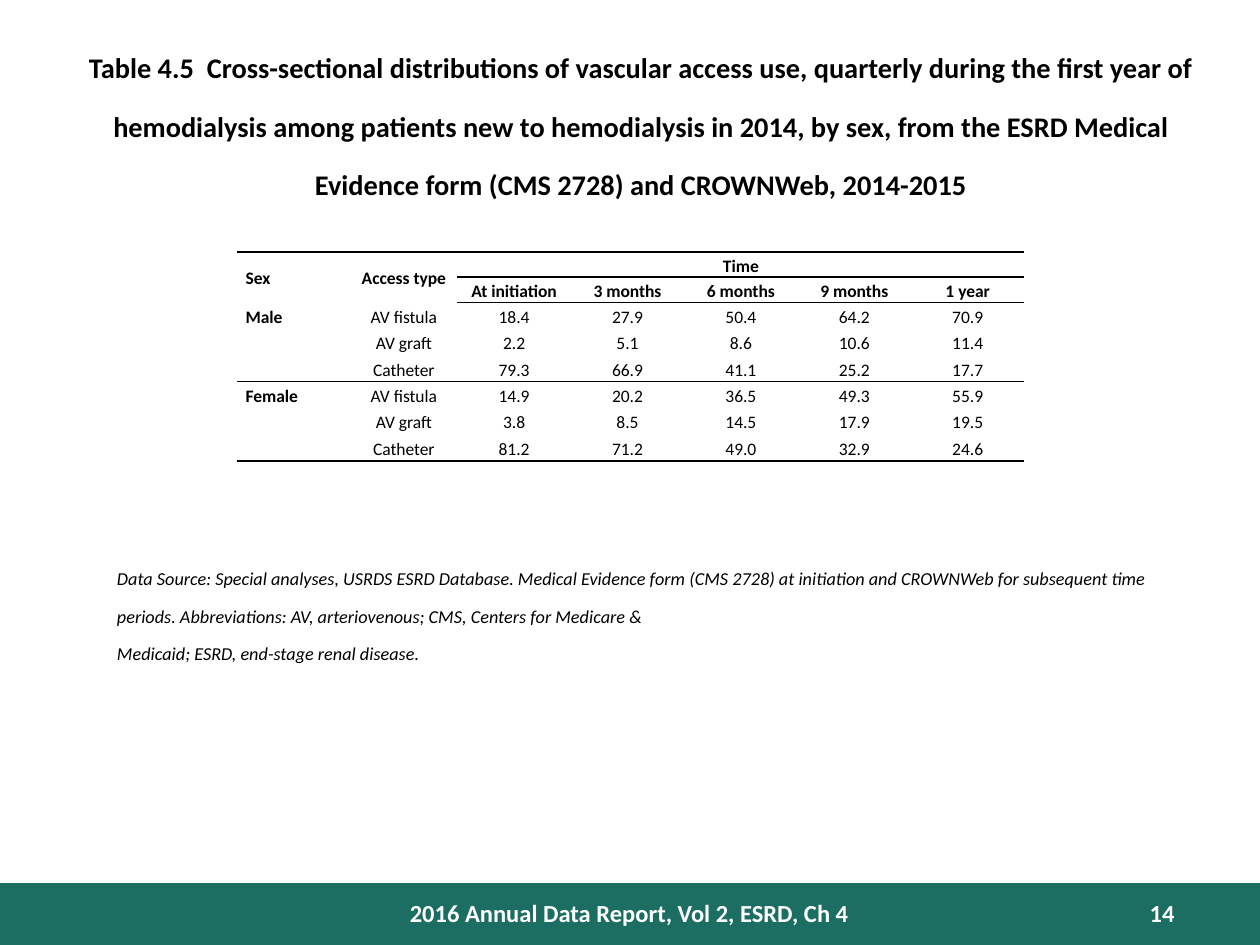
from lxml.etree import SubElement
from pptx import Presentation
from pptx.dml.color import RGBColor
from pptx.enum.shapes import MSO_SHAPE
from pptx.enum.text import MSO_ANCHOR, PP_ALIGN
from pptx.oxml.ns import qn
from pptx.util import Inches, Pt

GREEN = RGBColor(0x1C, 0x6E, 0x62)
WHITE = RGBColor(0xFF, 0xFF, 0xFF)
BLACK = RGBColor(0x00, 0x00, 0x00)
PLAIN_STYLE = "{2D5ABB26-0587-4C30-8999-92F81FD0307C}"  # no style, no grid


def write(paragraph, text, alignment, color, raised=False, **font_format):
    paragraph.alignment = alignment
    run = paragraph.add_run()
    run.text = text
    run.font.name = "Calibri"
    run.font.color.rgb = color
    for name, value in font_format.items():
        setattr(run.font, name, value)
    if raised:
        run.font._element.set("baseline", "30000")


def add_border(cell, side):
    line = SubElement(cell._tc.get_or_add_tcPr(), qn(f"a:{side}"), w=str(Pt(1)))
    fill = SubElement(line, qn("a:solidFill"))
    SubElement(fill, qn("a:srgbClr"), val=str(BLACK))


presentation = Presentation()
presentation.slide_width = Inches(10)
presentation.slide_height = Inches(7.5)
slide = presentation.slides.add_slide(presentation.slide_layouts[6])

# Footer band
band = slide.shapes.add_shape(
    MSO_SHAPE.RECTANGLE, Inches(0), Inches(7.01), Inches(10), Inches(0.5))
band.shadow.inherit = False
band.fill.solid()
band.fill.fore_color.rgb = GREEN
band.line.fill.background()

# Title, source note, footer and page number
title_format = dict(size=Pt(28), bold=True, raised=True)
note_format = dict(size=Pt(18), italic=True, raised=True)
footer_format = dict(size=Pt(14), bold=True)
text_boxes = [
    ((0.5, 0.3, 9.17, 1.25), PP_ALIGN.CENTER, BLACK, title_format, [
        "Table 4.5  Cross-sectional distributions of vascular access use, "
        "quarterly during the first year of hemodialysis among patients new to "
        "hemodialysis in 2014, by sex, from the ESRD Medical Evidence form "
        "(CMS 2728) and CROWNWeb, 2014-2015"]),
    ((0.83, 4.42, 8.42, 0.71), PP_ALIGN.LEFT, BLACK, note_format, [
        "Data Source: Special analyses, USRDS ESRD Database. Medical Evidence "
        "form (CMS 2728) at initiation and CROWNWeb for subsequent time periods. "
        "Abbreviations: AV, arteriovenous; CMS, Centers for Medicare &",
        "Medicaid; ESRD, end-stage renal disease."]),
    ((3.08, 7.08, 3.83, 0.33), PP_ALIGN.CENTER, WHITE, footer_format,
     ["2016 Annual Data Report, Vol 2, ESRD, Ch 4"]),
    ((8.42, 7.08, 1, 0.3), PP_ALIGN.RIGHT, WHITE, footer_format, ["14"]),
]
for position, alignment, color, font_format, lines in text_boxes:
    frame = slide.shapes.add_textbox(*map(Inches, position)).text_frame
    frame.word_wrap = True
    for index, line in enumerate(lines):
        paragraph = frame.add_paragraph() if index else frame.paragraphs[0]
        write(paragraph, line, alignment, color, **font_format)

# Vascular access table
rows = [
    ["Sex", "Access type", "Time", "", "", "", ""],
    ["", "", "At initiation", "3 months", "6 months", "9 months", "1 year"],
    ["Male", "AV fistula", "18.4", "27.9", "50.4", "64.2", "70.9"],
    ["", "AV graft", "2.2", "5.1", "8.6", "10.6", "11.4"],
    ["", "Catheter", "79.3", "66.9", "41.1", "25.2", "17.7"],
    ["Female", "AV fistula", "14.9", "20.2", "36.5", "49.3", "55.9"],
    ["", "AV graft", "3.8", "8.5", "14.5", "17.9", "19.5"],
    ["", "Catheter", "81.2", "71.2", "49.0", "32.9", "24.6"],
]
HEADER_ROWS = 2
RULED_ROWS = (1, 4, 7)  # rows with a line below
table = slide.shapes.add_table(
    len(rows), len(rows[0]), Inches(1.88), Inches(2), Inches(6.24), Inches(1.64)).table
table.first_row = False
table.horz_banding = False
table._tbl.tblPr.find(qn("a:tableStyleId")).text = PLAIN_STYLE
for index, column in enumerate(table.columns):
    column.width = Inches(0.85 if index == 1 else 0.9)
for index, row in enumerate(table.rows):
    row.height = Inches(0.2 if index < HEADER_ROWS else 0.21)

cell_format = dict(
    vertical_anchor=MSO_ANCHOR.MIDDLE, margin_left=Inches(0.07),
    margin_right=Inches(0.07), margin_top=Inches(0), margin_bottom=Inches(0))
for row_index, values in enumerate(rows):
    for column_index, value in enumerate(values):
        cell = table.cell(row_index, column_index)
        for name, setting in cell_format.items():
            setattr(cell, name, setting)
        if row_index == 0:
            add_border(cell, "lnT")
        if row_index in RULED_ROWS or (row_index == 0 and column_index > 1):
            add_border(cell, "lnB")
        if row_index >= HEADER_ROWS and column_index < 2:
            cell.fill.solid()
            cell.fill.fore_color.rgb = WHITE
        else:
            cell.fill.background()
        paragraph = cell.text_frame.paragraphs[0]
        paragraph.line_spacing = 1.15
        if value:
            write(paragraph, value,
                  PP_ALIGN.CENTER if column_index else PP_ALIGN.LEFT, BLACK,
                  size=Pt(10), bold=row_index < HEADER_ROWS or column_index == 0)
        else:
            # Keep empty cells as low as the filled ones
            SubElement(paragraph._p, qn("a:endParaRPr"), sz="1000")

# Header spans
table.cell(0, 0).merge(table.cell(1, 0))
table.cell(0, 1).merge(table.cell(1, 1))
table.cell(0, 2).merge(table.cell(0, 6))

presentation.save("out.pptx")
